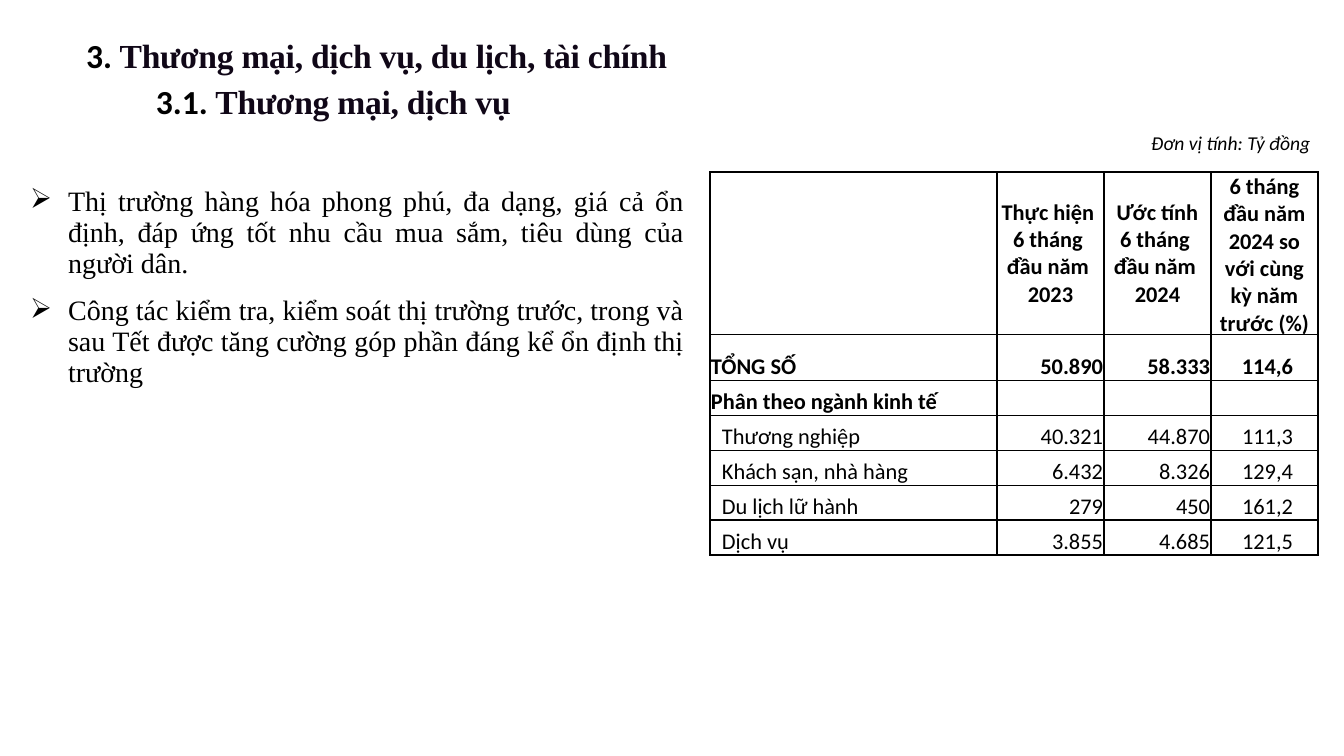
from lxml.etree import SubElement
from pptx import Presentation
from pptx.dml.color import RGBColor
from pptx.enum.text import MSO_ANCHOR as Anchor, MSO_AUTO_SIZE as AutoSize, PP_ALIGN as Align
from pptx.oxml.ns import qn
from pptx.util import Emu, Pt

COLORS = {"text": "000000", "heading": "100717", "border": "000000"}
SERIF, SANS = "Times New Roman", "Calibri"


def px(*lengths):
    scaled = [Emu(round(length * 914400 / 100.8)) for length in lengths]
    return scaled if len(scaled) > 1 else scaled[0]


def style(span, size, name, color="text", bold=False, italic=False):
    font = span.font
    font.size, font.name, font.bold, font.italic = Pt(size), name, bold, italic
    font.color.rgb = RGBColor.from_string(COLORS[color])


deck = Presentation()
deck.slide_width, deck.slide_height = px(1344, 756)
page = deck.slides.add_slide(deck.slide_layouts[5])

title = page.shapes.title
subtitle = page.shapes.add_textbox(*px(146, 76, 749, 50))
title.left, title.top, title.width, title.height = px(76, 30, 749, 50)
headings = [
    (title, "3. ", "Thương mại, dịch vụ, du lịch, tài chính"),
    (subtitle, "3.1. ", "Thương mại, dịch vụ"),
]
for box, number, heading in headings:
    frame = box.text_frame
    frame.word_wrap = True
    frame.auto_size = AutoSize.SHAPE_TO_FIT_TEXT
    frame.vertical_anchor = Anchor.TOP
    para = frame.paragraphs[0]
    para.alignment = Align.LEFT
    for text, name, color in [(number, SANS, "text"), (heading, SERIF, "heading")]:
        span = para.add_run()
        span.text = text
        style(span, 24, name, color, bold=True)
    span.font._element.set("spc", "-20")

values = [
    ["", "Thực hiện \v6 tháng \vđầu năm \v2023", "Ước tính\v6 tháng \vđầu năm \v2024",
     "6 tháng đầu năm 2024 so với cùng kỳ năm trước (%)"],
    ["TỔNG SỐ", "50.890", "58.333", "114,6"],
    ["Phân theo ngành kinh tế", "", "", ""],
    ["Thương nghiệp", "40.321", "44.870", "111,3"],
    ["Khách sạn, nhà hàng", "6.432", "8.326", "129,4"],
    ["Du lịch lữ hành", "279", "450", "161,2"],
    ["Dịch vụ", "3.855", "4.685", "121,5"],
]
market_points = "\n".join([
    "Thị trường hàng hóa phong phú, đa dạng, giá cả ổn định, đáp ứng tốt nhu cầu mua sắm, tiêu dùng của người dân.",
    "Công tác kiểm tra, kiểm soát thị trường trước, trong và sau Tết được tăng cường góp phần đáng kể ổn định thị trường",
])
layouts = [
    ((20, 173), [674], [229], [[market_points]], False),
    ((710, 172), [287, 107, 107, 107], [162, 46] + [35] * 5, values, True),
    ((1141, 127), [214], [51, 39], [["Đơn vị tính: Tỷ đồng "], [""]], False),
]
tables = []
for corner, widths, heights, texts, has_border in layouts:
    table = page.shapes.add_table(
        len(heights), len(widths), *px(*corner, sum(widths), sum(heights))).table
    table.first_row = table.horz_banding = False
    for column, width in zip(table.columns, widths):
        column.width = px(width)
    for row, height, row_texts in zip(table.rows, heights, texts):
        row.height = px(height)
        for cell, text in zip(row.cells, row_texts):
            cell.text = text
            props = cell._tc.get_or_add_tcPr()
            for side in ["lnL", "lnR", "lnT", "lnB"]:
                line = SubElement(props, qn("a:" + side), w=str(Pt(1)))
                if has_border:
                    paint = SubElement(line, qn("a:solidFill"))
                    SubElement(paint, qn("a:srgbClr"), val=COLORS["border"])
                else:
                    SubElement(line, qn("a:noFill"))
            cell.fill.background()
    tables.append(table)
points_table, trade_table, unit_table = tables

points_cell = points_table.cell(0, 0)
points_cell.margin_top, points_cell.margin_bottom = px(14, 0)
for para in points_cell.text_frame.paragraphs:
    para.alignment = Align.JUSTIFY
    para.line_spacing, para.space_after = Pt(22), Pt(12)
    style(para.runs[0], 20, SERIF)
    props = para._p.get_or_add_pPr()
    props.set("marL", str(px(38)))
    props.set("indent", str(px(-38)))
    SubElement(props, qn("a:buChar"), char="➢")

for row_index, row in enumerate(trade_table.rows):
    for column_index, cell in enumerate(row.cells):
        is_header = row_index == 0
        is_label = column_index == 0
        cell.vertical_anchor = Anchor.MIDDLE if is_header else Anchor.BOTTOM
        left = 12 if is_label and row_index > 2 else 1
        right = 25 if column_index == 3 and not is_header else 1
        cell.margin_left, cell.margin_right, cell.margin_top, cell.margin_bottom = px(left, right, 1, 0)
        para = cell.text_frame.paragraphs[0]
        para.alignment = Align.CENTER if is_header else Align.LEFT if is_label else Align.RIGHT
        for span in para.runs:
            style(span, 16, SANS, bold=row_index < 3)

unit_para = unit_table.cell(0, 0).text_frame.paragraphs[0]
unit_para.alignment = Align.JUSTIFY
unit_para.space_after = Pt(12)
style(unit_para.runs[0], 14, SANS, italic=True)

deck.save("out.pptx")
